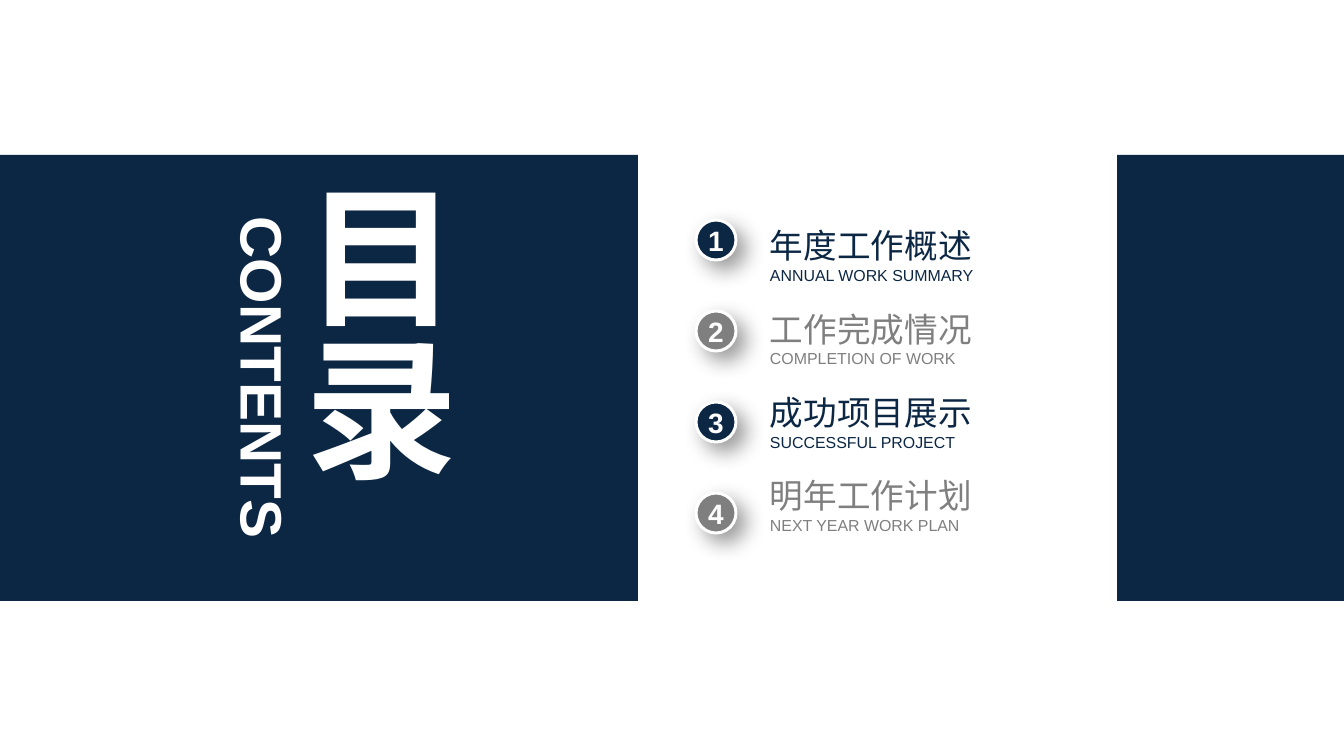
from dataclasses import dataclass

from lxml import etree
from pptx import Presentation
from pptx import util as u
from pptx.dml import color
from pptx.enum import shapes, text
from pptx.oxml import ns

SCALE = 914400 / 95.6
NAVY, GRAY, WHITE = "0C2744", "7F7F7F", "FFFFFF"
LEFT, MID = text.PP_ALIGN.LEFT, text.PP_ALIGN.CENTER
PITCH = 91


@dataclass
class Item:
    name: str
    sub: str
    hue: str


@dataclass
class Box:
    x: int
    y: int
    w: int
    h: int


ITEMS = [
    Item("年度工作概述", "ANNUAL WORK SUMMARY", NAVY),
    Item("工作完成情况", "COMPLETION OF WORK", GRAY),
    Item("成功项目展示", "SUCCESSFUL PROJECT", NAVY),
    Item("明年工作计划", "NEXT YEAR WORK PLAN", GRAY),
]
PANELS = [Box(-3, 155, 641, 446), Box(1117, 155, 230, 446)]


def px(n: int) -> u.Emu:
    return u.Emu(round(n * SCALE))


def rgb(hue: str) -> color.RGBColor:
    return color.RGBColor.from_string(hue)


def place(shape, box: Box) -> None:
    shape.left, shape.top = px(box.x), px(box.y)
    shape.width, shape.height = px(box.w), px(box.h)


def frame(shape, anchor=text.MSO_ANCHOR.MIDDLE):
    tf = shape.text_frame
    tf.margin_left = tf.margin_right = tf.margin_top = tf.margin_bottom = 0
    tf.word_wrap = True
    tf.auto_size = text.MSO_AUTO_SIZE.NONE
    tf.vertical_anchor = anchor
    return tf


def write(para, words: str, *, size: float, hue: str = WHITE,
          bold: bool = False, align=MID, gap: int = 0) -> None:
    para.alignment = align
    para.space_before = u.Pt(gap)
    run = para.add_run()
    run.text = words
    run.font.name, run.font.size, run.font.bold = "Arial", u.Pt(size), bold
    run.font.color.rgb = rgb(hue)


def draw(slide, kind, box: Box, hue: str):
    shape = slide.shapes.add_shape(kind, px(box.x), px(box.y), px(box.w), px(box.h))
    shape.shadow.inherit = False
    shape.fill.solid()
    shape.fill.fore_color.rgb = rgb(hue)
    shape.line.fill.background()
    return shape


def shade(shape) -> None:
    fx = shape.element.spPr.find(ns.qn("a:effectLst"))
    cast = etree.SubElement(fx, ns.qn("a:outerShdw"), blurRad="203200",
                            dist="114300", dir="2700000", algn="tl", rotWithShape="0")
    tint = etree.SubElement(cast, ns.qn("a:srgbClr"), val="000000")
    etree.SubElement(tint, ns.qn("a:alpha"), val="40000")


def badge(slide, row: int, item: Item) -> None:
    shape = draw(slide, shapes.MSO_SHAPE.OVAL, Box(696, 220 + row * PITCH, 40, 40), item.hue)
    shape.line.color.rgb, shape.line.width = rgb(WHITE), u.Pt(2.25)
    shade(shape)
    write(frame(shape).paragraphs[0], str(row + 1), size=21.1, bold=True)


def plain(para) -> None:
    props = para._p.get_or_add_pPr()
    props.set("marL", "0")
    props.set("indent", "0")
    etree.SubElement(props, ns.qn("a:buNone"))


def agenda(body) -> None:
    place(body, Box(770, 213, 258, 334))
    tf = frame(body)
    for row, item in enumerate(ITEMS):
        head = tf.add_paragraph() if row else tf.paragraphs[0]
        write(head, item.name, size=25.3, hue=item.hue, align=LEFT, gap=18 if row else 0)
        foot = tf.add_paragraph()
        write(foot, item.sub, size=12, hue=item.hue, align=LEFT)
        plain(head)
        plain(foot)


def main() -> None:
    """Build the contents slide with its two panels and four numbered topics."""
    deck = Presentation()
    deck.slide_width, deck.slide_height = px(1344), px(756)
    slide = deck.slides.add_slide(deck.slide_layouts[1])
    for box in PANELS:
        panel = draw(slide, shapes.MSO_SHAPE.RECTANGLE, box, NAVY)
        slide.shapes.element.insert(2, panel.element)

    title = slide.shapes.title
    place(title, Box(284, 180, 185, 397))
    tf = frame(title)
    tf._txBody.bodyPr.set("vert", "eaVert")
    write(tf.paragraphs[0], "目录", size=115, bold=True, align=LEFT)

    label = slide.shapes.add_textbox(px(91), px(342), px(345), px(71))
    label.rotation = 90
    tf = frame(label, text.MSO_ANCHOR.TOP)
    write(tf.paragraphs[0], "CONTENTS", size=44, bold=True)

    agenda(slide.placeholders[1])
    for row, item in enumerate(ITEMS):
        badge(slide, row, item)
    deck.save("out.pptx")


if __name__ == "__main__":
    main()
